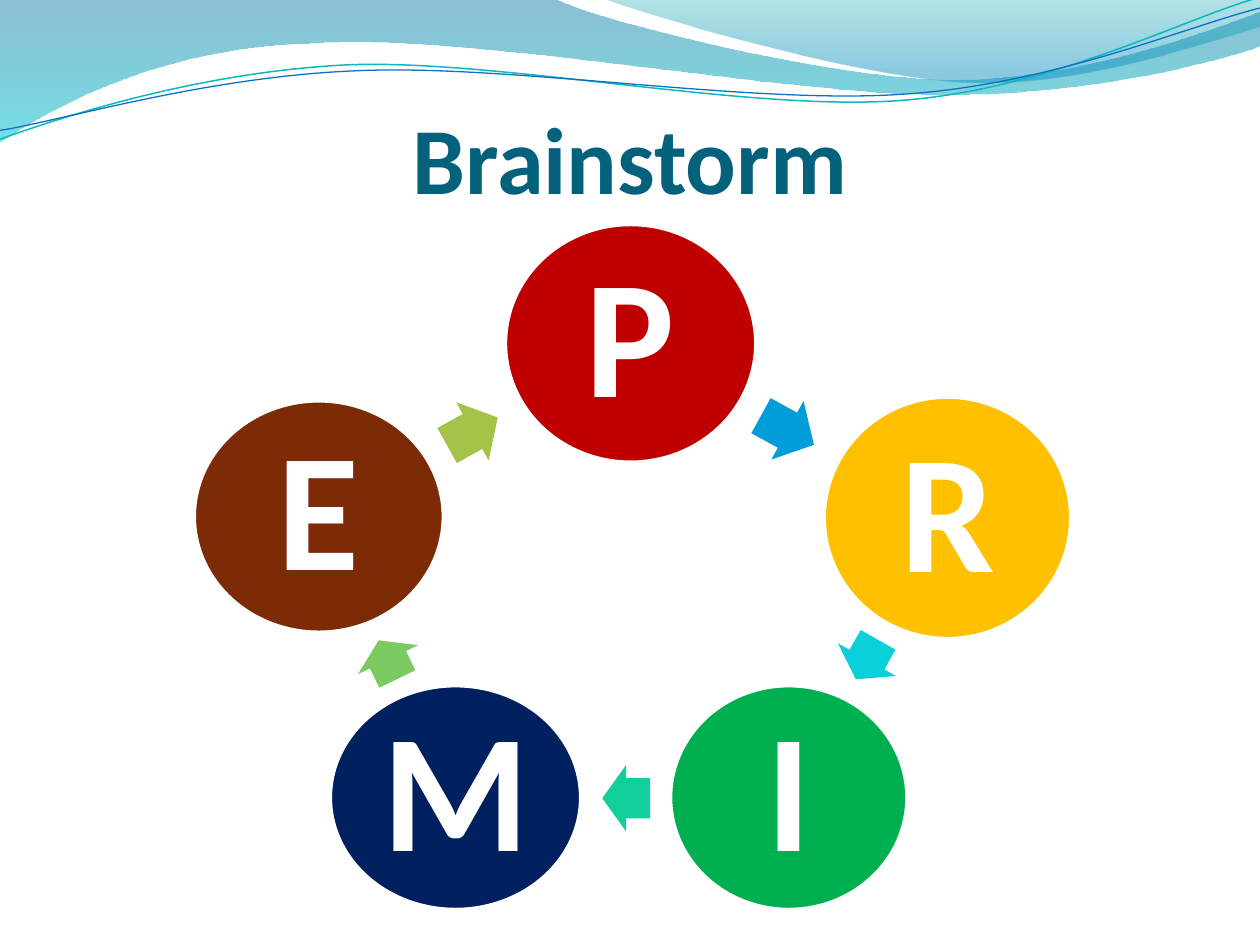
import pptx
import pptx.util
import pptx.dml.color
import pptx.enum.shapes
import pptx.enum.text
import pptx.oxml.ns
from lxml import etree

PX = 9144  # 100 px to the inch
COLORS = {
    "white": "FFFFFF", "title": "04617B",
    "red": "C00000", "yellow": "FFC000", "green": "00B050",
    "navy": "002060", "brown": "7C2B06",
    "blue": "009DD9", "cyan": "0BD0D9", "mint": "10CF9B",
    "grass": "7CCA62", "olive": "A5C249",
    "wave_top": "0074A1", "wave_bottom": "00C6CF",
    "crest_top": "00A1A9", "crest_bottom": "008BBF",
    "line_teal": "0AB8BF", "line_blue": "0F6FC6",
}
qn = pptx.oxml.ns.qn


def rgb(name):
    return pptx.dml.color.RGBColor.from_string(COLORS[name])


def write(tf, text, size, color, font="Calibri", bold=True, spacing=1.0):
    """Put one centred paragraph in a text frame."""
    tf.vertical_anchor = pptx.enum.text.MSO_ANCHOR.MIDDLE
    tf.auto_size = pptx.enum.text.MSO_AUTO_SIZE.NONE
    tf.margin_left = tf.margin_top = tf.margin_right = tf.margin_bottom = 0
    p = tf.paragraphs[0]
    p.alignment = pptx.enum.text.PP_ALIGN.CENTER
    p.line_spacing = spacing
    r = p.add_run()
    r.text = text
    r.font.name, r.font.bold = font, bold
    r.font.size = pptx.util.Pt(size)
    r.font.color.rgb = rgb(color)


class Deck:
    def __init__(self, prs):
        self.s = prs.slides.add_slide(prs.slide_layouts[5])
        self.shapes = self.s.shapes

    def title(self, text, x, y, w, h):
        sp = self.shapes.title
        sp.left, sp.top, sp.width, sp.height = (v * PX for v in (x, y, w, h))
        write(sp.text_frame, text, 54, "title")
        sp.text_frame.margin_top = 5 * PX

    def outline(self, start, segments, close):
        """A segment is a line end (2 numbers) or a cubic curve (6 numbers)."""
        fb = self.shapes.build_freeform(*start, scale=PX)
        for seg in segments:
            fb.add_line_segments(list(zip(seg[::2], seg[1::2])), close=False)
        sp = fb.convert_to_shape()
        sp.shadow.inherit = False
        # Merge the three points of each curve into one Bezier segment
        lines = iter(list(sp._element.iter(qn("a:lnTo"))))
        for seg in segments:
            parts = [next(lines) for _ in seg[::2]]
            if len(parts) == 3:
                curve = etree.Element(qn("a:cubicBezTo"))
                parts[0].addprevious(curve)
                for part in parts:
                    curve.append(part[0])
                    part.getparent().remove(part)
        if close:
            outline = next(sp._element.iter(qn("a:moveTo"))).getparent()
            etree.SubElement(outline, qn("a:close"))
        return sp

    def wave(self, start, segments, stops):
        sp = self.outline(start, segments, True)
        sp.line.fill.background()
        sp.fill.gradient()
        sp.fill.gradient_angle = 270
        for stop, (pos, color, _) in zip(sp.fill.gradient_stops, stops):
            stop.position = pos
            stop.color.rgb = rgb(color)
        for clr, (_, _, alpha) in zip(sp._element.iter(qn("a:srgbClr")), stops):
            etree.SubElement(clr, qn("a:alpha")).set("val", str(alpha * 1000))

    def ripple(self, start, segments, color, width):
        sp = self.outline(start, segments, False)
        sp.rotation = 357.3
        sp.fill.background()
        sp.line.color.rgb = rgb(color)
        sp.line.width = pptx.util.Pt(width)

    def shape(self, kind, x, y, w, h, color):
        sp = self.shapes.add_shape(kind, x * PX, y * PX, w * PX, h * PX)
        sp.shadow.inherit = False
        sp.fill.solid()
        sp.fill.fore_color.rgb = rgb(color)
        return sp

    def circle(self, letter, x, y, w, h, color):
        sp = self.shape(pptx.enum.shapes.MSO_SHAPE.OVAL, x, y, w, h, color)
        sp.line.color.rgb = rgb("white")
        sp.line.width = pptx.util.Pt(2.25)
        write(sp.text_frame, letter, 96, "white", spacing=0.9)

    def arrow(self, x, y, w, h, angle, color):
        kind = pptx.enum.shapes.MSO_SHAPE.RIGHT_ARROW
        sp = self.shape(kind, x, y, w, h, color)
        sp.adjustments[0], sp.adjustments[1] = 0.6, 0.5
        sp.rotation = angle
        sp.line.fill.background()


def main():
    prs = pptx.Presentation()
    prs.slide_width, prs.slide_height = 1000 * PX, 750 * PX
    deck = Deck(prs)

    # Waves along the top edge
    deck.wave((0, 0),
              [(440, -1), (476, 17, 664, 63, 758, 63),
               (853, 63, 958, 26, 1000, 9), (1001, 36),
               (983, 44, 870, 76, 746, 75), (622, 75, 382, 28, 257, 34),
               (129, 36, 46, 83, -1, 113), (0, 0)],
              [(0, "wave_top", 45), (1, "wave_bottom", 55)])
    deck.wave((479, -1),
              [(509, 11, 682, 62, 769, 65), (856, 69, 961, 32, 1000, 21),
               (1000, 0), (479, -1)],
              [(0, "crest_top", 30), (0.8, "crest_bottom", 45)])

    # Thin tilted lines under the waves
    deck.ripple((-2, 87),
                [(47, 72, 158, 41, 277, 41), (396, 42, 591, 93, 712, 90),
                 (832, 87, 940, 36, 1000, 22)], "line_teal", 0.85)
    deck.ripple((-2, 80),
                [(46, 75, 164, 45, 283, 46), (403, 46, 596, 88, 716, 85),
                 (835, 83, 942, 42, 1002, 30)], "line_blue", 0.75)

    deck.title("Brainstorm", 50, 75, 900, 94)

    # Cycle: each circle with the arrow that leaves it
    cycle = [
        (("P", 401, 178, 199, 189, "red"), (601, 315, 48, 53, 28.8, "blue")),
        (("R", 654, 315, 196, 192, "yellow"), (670, 497, 36, 53, 119.5, "cyan")),
        (("I", 532, 544, 188, 178, "green"), (478, 607, 38, 53, 180, "mint")),
        (("M", 262, 544, 199, 178, "navy"), (291, 497, 34, 53, 244.2, "grass")),
        (("E", 154, 318, 198, 184, "brown"), (352, 316, 46, 53, 330.9, "olive")),
    ]
    for circle, arrow in cycle:
        deck.circle(*circle)
        deck.arrow(*arrow)

    prs.save("out.pptx")


if __name__ == "__main__":
    main()
